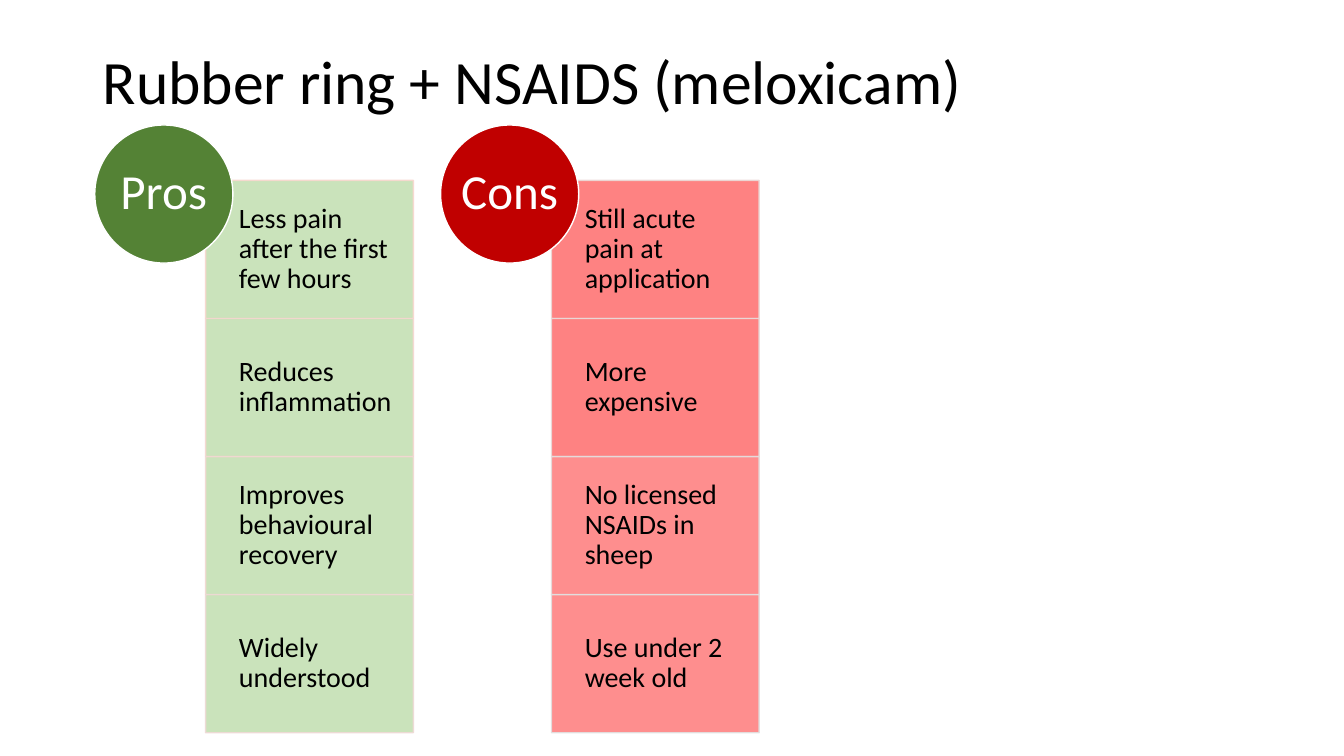
from pptx import Presentation
from pptx.dml.color import RGBColor
from pptx.enum.shapes import MSO_SHAPE
from pptx.enum.text import MSO_ANCHOR, PP_ALIGN
from pptx.oxml.ns import qn
from pptx.util import Inches, Pt
from lxml.etree import SubElement

COLORS = {
    "text": "000000",
    "white": "FFFFFF",
    "pros": "548235",
    "pros_cell": "C5E0B4",
    "cons": "C00000",
    "cons_cell": "FE8282",
}
FONT = "Calibri"
CELL_HEIGHT = 1.37
CELL_WIDTH = 2.06
CIRCLE_SIZE = 1.37
CELL_OFFSET_X = 1.1
CELL_OFFSET_Y = 0.55

PROS = [
    ("Less pain after the first few hours", "F8D7CE", 90),
    ("Reduces inflammation", "F5D7D0", 90),
    ("Improves behavioural recovery", "F2D8D3", 90),
    ("Widely understood", "EED9D5", 90),
]
CONS = [
    ("Still acute pain at application", "EBDAD8", 100),
    ("More expensive", "E8DCDB", 100),
    ("No licensed NSAIDs in sheep", "E4DEDE", 90),
    ("Use under 2 week old", "E1E1E1", 90),
]


def set_alpha(parent, percent):
    color = parent.find(qn("a:solidFill")).find(qn("a:srgbClr"))
    SubElement(color, qn("a:alpha")).set("val", str(percent * 1000))


def write_text(s, text, size, color, insets, align=PP_ALIGN.LEFT, wrap=True):
    tf = s.text_frame
    tf.word_wrap = wrap
    tf.vertical_anchor = MSO_ANCHOR.MIDDLE
    tf.margin_left, tf.margin_top, tf.margin_right, tf.margin_bottom = map(Inches, insets)
    p = tf.paragraphs[0]
    p.text = text
    p.alignment = align
    p.line_spacing = 0.9
    p.font.name = FONT
    p.font.size = Pt(size)
    p.font.color.rgb = RGBColor.from_string(color)


def add_panel(slide, kind, left, top, width, height, fill, line):
    s = slide.shapes.add_shape(kind, Inches(left), Inches(top), Inches(width), Inches(height))
    s.shadow.inherit = False
    s.fill.solid()
    s.fill.fore_color.rgb = RGBColor.from_string(fill)
    s.line.color.rgb = RGBColor.from_string(line)
    s.line.width = Pt(1)
    return s


def add_title(slide, left, top, width, height, text):
    s = slide.shapes.add_textbox(Inches(left), Inches(top), Inches(width), Inches(height))
    write_text(s, text, 44, COLORS["text"], (0.1, 0.05, 0.1, 0.05))


def add_column(slide, left, top, heading, items, key):
    for row, (text, line, opacity) in enumerate(items):
        cell_top = top + CELL_OFFSET_Y + row * CELL_HEIGHT
        s = add_panel(slide, MSO_SHAPE.RECTANGLE, left + CELL_OFFSET_X, cell_top,
                      CELL_WIDTH, CELL_HEIGHT, COLORS[key + "_cell"], line)
        set_alpha(s._element.spPr, opacity)
        set_alpha(s._element.spPr.find(qn("a:ln")), 90)
        write_text(s, text, 20, COLORS["text"], (0.33, 0.16, 0.16, 0.16))
    s = add_panel(slide, MSO_SHAPE.OVAL, left, top, CIRCLE_SIZE, CIRCLE_SIZE,
                  COLORS[key], COLORS["white"])
    write_text(s, heading, 35, COLORS["white"], (0, 0, 0, 0), PP_ALIGN.CENTER, wrap=False)


def main():
    prs = Presentation()
    prs.slide_width = Inches(13.33)
    prs.slide_height = Inches(7.5)
    slide = prs.slides.add_slide(prs.slide_layouts[6])
    add_title(slide, 0.92, 0.11, 11.5, 1.45, "Rubber ring + NSAIDS (meloxicam)")
    add_column(slide, 0.94, 1.24, "Pros", PROS, "pros")
    add_column(slide, 4.37, 1.24, "Cons", CONS, "cons")
    prs.save("out.pptx")


if __name__ == "__main__":
    main()
